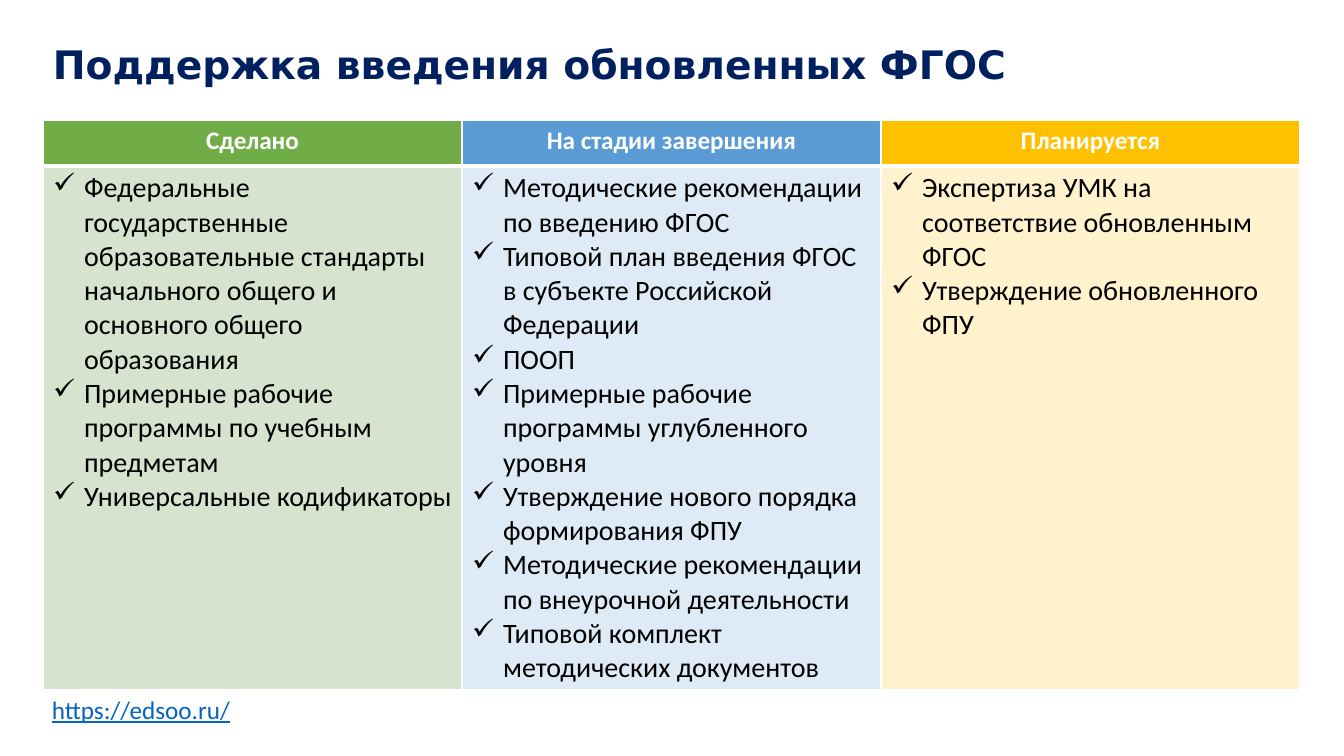
import pptx
import pptx.dml.color
import pptx.enum.text
import pptx.oxml
import pptx.oxml.ns
import pptx.util

PX = 914400 / 100.8  # EMU in one px
NAMESPACE = pptx.oxml.ns.nsdecls("a")


def px(length):
    return pptx.util.Emu(round(length * PX))


def style(font, name, size, color, bold=False):
    font.name = name
    font.size = pptx.util.Pt(size)
    font.bold = bold
    font.color.rgb = pptx.dml.color.RGBColor.from_string(color)


# Header, header fill, body fill, items
columns = [
    ("Сделано", "70AD47", "D5E3CF", [
        "Федеральные государственные образовательные стандарты "
        "начального общего и основного общего образования",
        "Примерные рабочие программы по учебным предметам",
        "Универсальные кодификаторы",
    ]),
    ("На стадии завершения", "5B9BD5", "DEEBF7", [
        "Методические рекомендации по введению ФГОС",
        "Типовой план введения ФГОС в субъекте Российской Федерации",
        "ПООП",
        "Примерные рабочие программы углубленного уровня",
        "Утверждение нового порядка формирования ФПУ",
        "Методические рекомендации по внеурочной деятельности",
        "Типовой комплект методических документов",
    ]),
    ("Планируется", "FFC000", "FFF2CC", [
        "Экспертиза УМК на соответствие обновленным ФГОС",
        "Утверждение обновленного ФПУ",
    ]),
]

deck = pptx.Presentation()
deck.slide_width, deck.slide_height = px(1344), px(756)
page = deck.slides.add_slide(deck.slide_layouts[6])

# Title
box = page.shapes.add_textbox(px(43), px(40), px(1122), px(53))
box.text_frame.word_wrap = True
box.text_frame.vertical_anchor = pptx.enum.text.MSO_ANCHOR.MIDDLE
para = box.text_frame.paragraphs[0]
para.text = "Поддержка введения обновленных ФГОС"
para.line_spacing = 0.9
style(para.font, "DejaVu Sans", 28, "002060", True)

# Table
table = page.shapes.add_table(2, 3, px(43), px(120), px(1257), px(570)).table
table.rows[0].height, table.rows[1].height = px(46), px(524)
for index, (header, header_fill, body_fill, items) in enumerate(columns):
    table.columns[index].width = px(419)
    for row, (lines, fill) in enumerate([([header], header_fill), (items, body_fill)]):
        cell = table.cell(row, index)

        # White borders, thicker between header and body
        properties = cell._tc.get_or_add_tcPr()
        for side in "LRTB":
            width = 3 if (row, side) in [(0, "B"), (1, "T")] else 1
            properties.append(pptx.oxml.parse_xml(
                f'<a:ln{side} {NAMESPACE} w="{pptx.util.Pt(width)}"><a:solidFill>'
                f'<a:srgbClr val="FFFFFF"/></a:solidFill></a:ln{side}>'))
        cell.fill.solid()
        cell.fill.fore_color.rgb = pptx.dml.color.RGBColor.from_string(fill)

        # Centred header or check-marked list
        cell.text_frame.text = "\n".join(lines)
        for para in cell.text_frame.paragraphs:
            if row == 0:
                para.alignment = pptx.enum.text.PP_ALIGN.CENTER
                style(para.font, "Calibri", 18, "FFFFFF", True)
            else:
                style(para.font, "Calibri", 20, "000000")
                indents = para._p.get_or_add_pPr()
                indents.set("marL", str(px(31)))
                indents.set("indent", str(px(-31)))
                indents.insert(0, pptx.oxml.parse_xml(f'<a:buChar {NAMESPACE} char="✓"/>'))

# Web address
box = page.shapes.add_textbox(px(42), px(689), px(207), px(40))
box.text_frame.word_wrap = False
para = box.text_frame.paragraphs[0]
para.text = "https://edsoo.ru/"
style(para.font, "Calibri", 18, "0563C1")
para.font.underline = True

deck.save("out.pptx")
